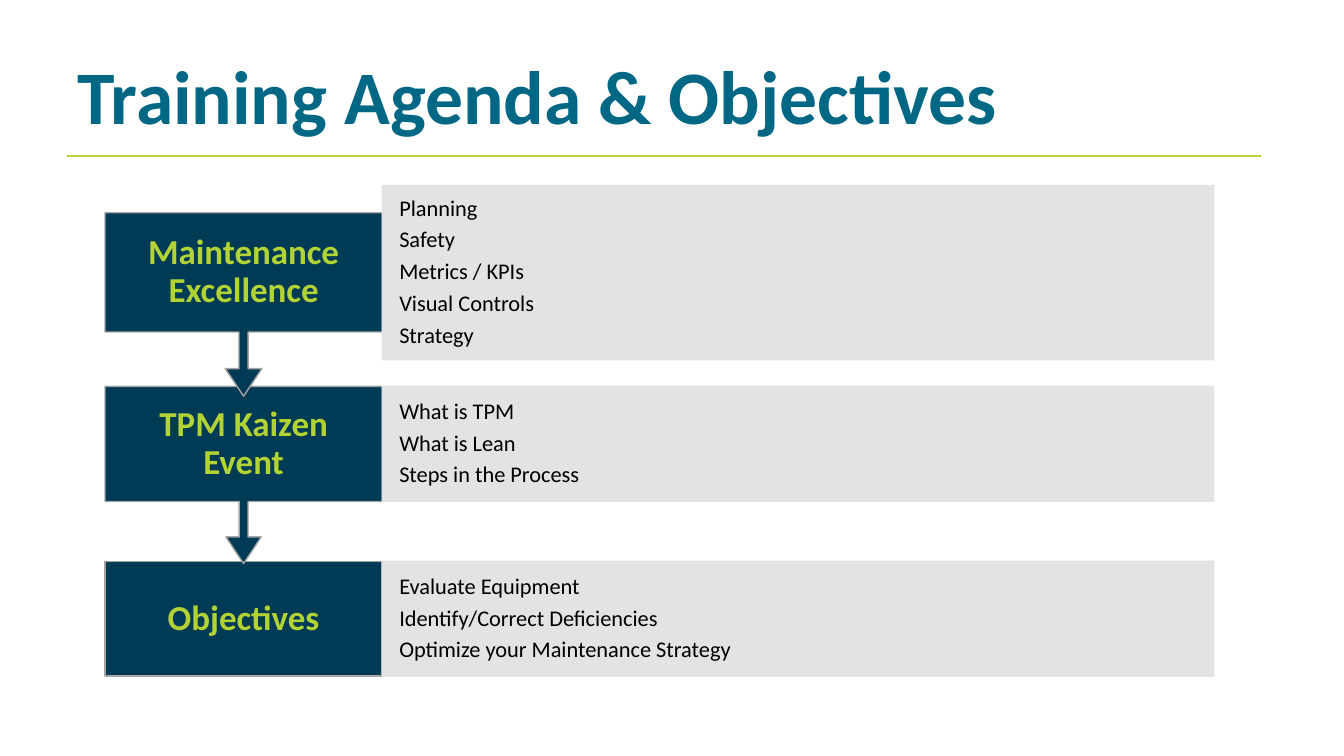
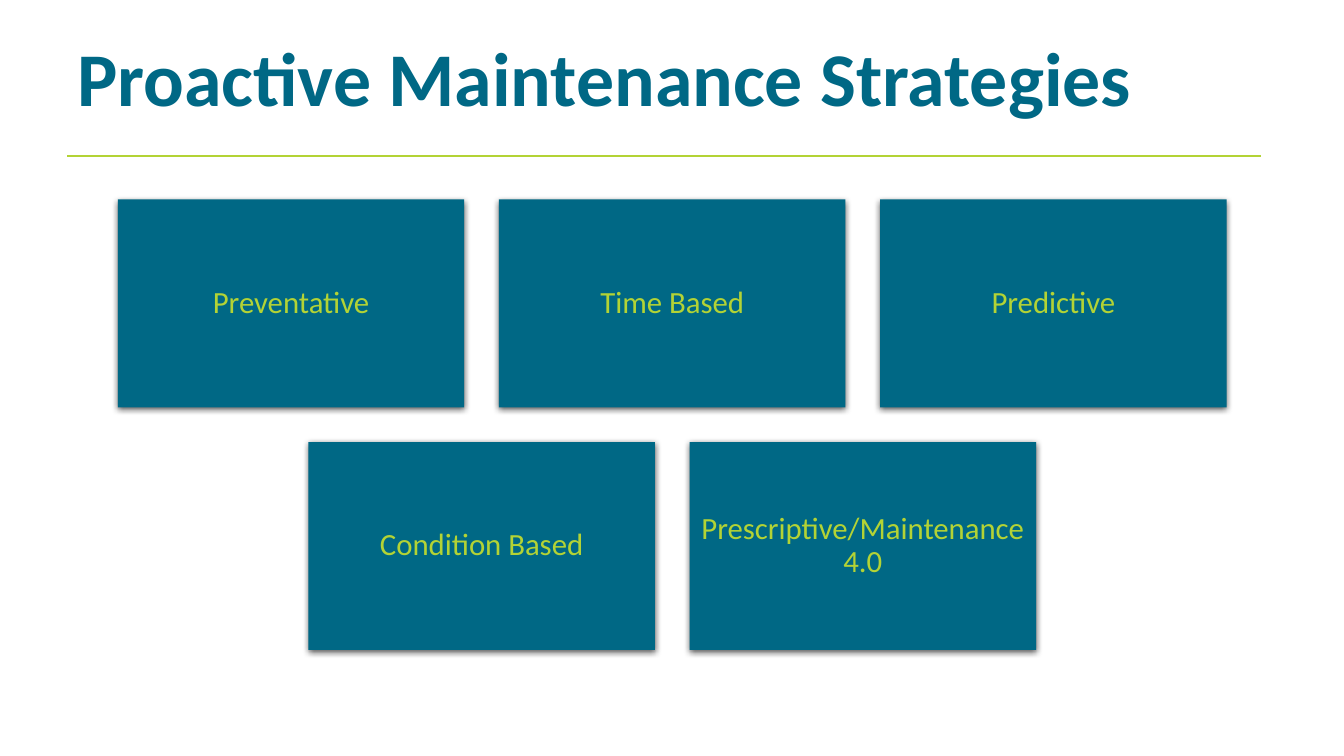
from lxml import etree
from pptx import Presentation
from pptx.dml.color import RGBColor
from pptx.enum.shapes import MSO_CONNECTOR, MSO_SHAPE
from pptx.enum.text import MSO_ANCHOR, MSO_AUTO_SIZE, PP_ALIGN
from pptx.oxml import parse_xml
from pptx.oxml.ns import nsdecls, qn
from pptx.util import Pt

FONT = "Calibri"
COLORS = {
    "teal": "006885",
    "navy": "003B55",
    "lime": "B3D335",
    "panel": "E1E1E1",
    "outline": "A5A5A5",
    "text": "000000",
}
AGENDA = [
    # heading, step top, step height, panel top, panel height, topics
    ("Maintenance Excellence", 152, 131, 132.5, 124.5,
     ["Planning", "Safety", "Metrics / KPIs", "Visual Controls", "Strategy"]),
    ("TPM Kaizen Event", 276, 126.5, 276, 82,
     ["What is TPM", "What is Lean", "Steps in the Process"]),
    ("Objectives", 401, 82, 401, 82,
     ["Evaluate Equipment", "Identify/Correct Deficiencies",
      "Optimize your Maintenance Strategy"]),
]
STRATEGIES = [
    ["Preventative", "Time Based", "Predictive"],
    ["Condition Based", "Prescriptive/Maintenance 4.0"],
]


def rgb(name):
    return RGBColor.from_string(COLORS[name])


def place(sp, x, y, w, h):
    sp.left, sp.top, sp.width, sp.height = Pt(x), Pt(y), Pt(w), Pt(h)


def write(sp, lines, size, color, bold=False, align=PP_ALIGN.CENTER,
          anchor=MSO_ANCHOR.MIDDLE, spacing=0.9, insets=(7.2, 3.6)):
    tf = sp.text_frame
    tf.word_wrap = True
    tf.auto_size = MSO_AUTO_SIZE.NONE
    tf.vertical_anchor = anchor
    tf.margin_left = tf.margin_right = Pt(insets[0])
    tf.margin_top = tf.margin_bottom = Pt(insets[1])
    for i, line in enumerate(lines):
        p = tf.paragraphs[0] if i == 0 else tf.add_paragraph()
        p.alignment = align
        p.line_spacing = spacing
        p.space_before = Pt(0)
        p.space_after = Pt(5.5 if i < len(lines) - 1 else 0)
        r = p.add_run()
        r.text = line
        r.font.name, r.font.size, r.font.bold = FONT, Pt(size), bold
        r.font.color.rgb = rgb(color)


def add_box(s, kind, x, y, w, h, fill, line=None):
    sp = s.shapes.add_shape(kind, Pt(x), Pt(y), Pt(w), Pt(h))
    sp.shadow.inherit = False
    sp.fill.solid()
    sp.fill.fore_color.rgb = rgb(fill)
    if line:
        sp.line.color.rgb = rgb(line)
        sp.line.width = Pt(1)
    else:
        sp.line.fill.background()
    return sp


def set_alpha(sp, percent):
    """Make the fill and the outline partly transparent."""
    for color in sp.element.spPr.iter(qn("a:srgbClr")):
        etree.SubElement(color, qn("a:alpha")).set("val", str(percent * 1000))


def add_drop_shadow(sp):
    effects = sp.element.spPr.find(qn("a:effectLst"))
    effects.append(parse_xml(
        f'<a:outerShdw {nsdecls("a")} blurRad="{Pt(4.5)}" dist="{Pt(1.5)}" '
        'dir="5400000" algn="ctr" rotWithShape="0"><a:srgbClr val="000000">'
        '<a:alpha val="63000"/></a:srgbClr></a:outerShdw>'))


def add_titled_slide(prs, title, size=54, spacing=1.0):
    s = prs.slides.add_slide(prs.slide_layouts[5])
    place(s.shapes.title, 48, 31, 846, 75.5)
    write(s.shapes.title, [title], size, "teal", True, PP_ALIGN.LEFT,
          MSO_ANCHOR.TOP, spacing)
    rule = s.shapes.add_connector(MSO_CONNECTOR.STRAIGHT,
                                  Pt(48), Pt(111.5), Pt(900.5), Pt(111.5))
    rule.line.color.rgb = rgb("lime")
    rule.line.width = Pt(1)
    etree.SubElement(rule.element.spPr, qn("a:effectLst"))
    return s


def add_agenda(s, x, w, step_w=198):
    """Steps run down the left; each has a panel of topics on its right."""
    # Lower rows go first, so that each arrow tip lies over the next step.
    for i, (heading, y, h, panel_y, panel_h, topics) in reversed(
            list(enumerate(AGENDA))):
        last = i == len(AGENDA) - 1
        kind = MSO_SHAPE.RECTANGLE if last else MSO_SHAPE.DOWN_ARROW_CALLOUT
        step = add_box(s, kind, x, y, step_w, h, "navy", "outline")
        if not last:
            for n, value in enumerate((0.05, 0.1, 0.15, 0.65)):
                step.adjustments[n] = value
        write(step, [heading], 25, "lime", True, insets=(14.2, 13.5))
        panel = add_box(s, MSO_SHAPE.RECTANGLE, x + step_w, panel_y,
                        w - step_w, panel_h, "panel", "panel")
        set_alpha(panel, 90)
        write(panel, topics, 16, "text", align=PP_ALIGN.LEFT,
              insets=(12.2, 5))


def add_card_grid(s, x, y, w, rows, gap=24.8):
    """Equal cards in rows, each row centred in the width."""
    columns = max(len(row) for row in rows)
    card_w = (w - gap * (columns - 1)) / columns
    card_h = card_w * 0.6
    for i, row in enumerate(rows):
        start = x + (columns - len(row)) * (card_w + gap) / 2
        for j, label in enumerate(row):
            card = add_box(s, MSO_SHAPE.RECTANGLE, start + j * (card_w + gap),
                           y + i * (card_h + gap), card_w, card_h, "teal")
            add_drop_shadow(card)
            write(card, [label], 22, "lime", insets=(6.5, 6.5))


def main():
    prs = Presentation()
    prs.slide_width, prs.slide_height = Pt(960), Pt(540)
    s = add_titled_slide(prs, "Training Agenda & Objectives")
    add_agenda(s, 75, 792)
    s = add_titled_slide(prs, "Proactive Maintenance Strategies", 54.2, 0.8)
    add_card_grid(s, 84.2, 142.5, 792, STRATEGIES)
    prs.save("out.pptx")


if __name__ == "__main__":
    main()
